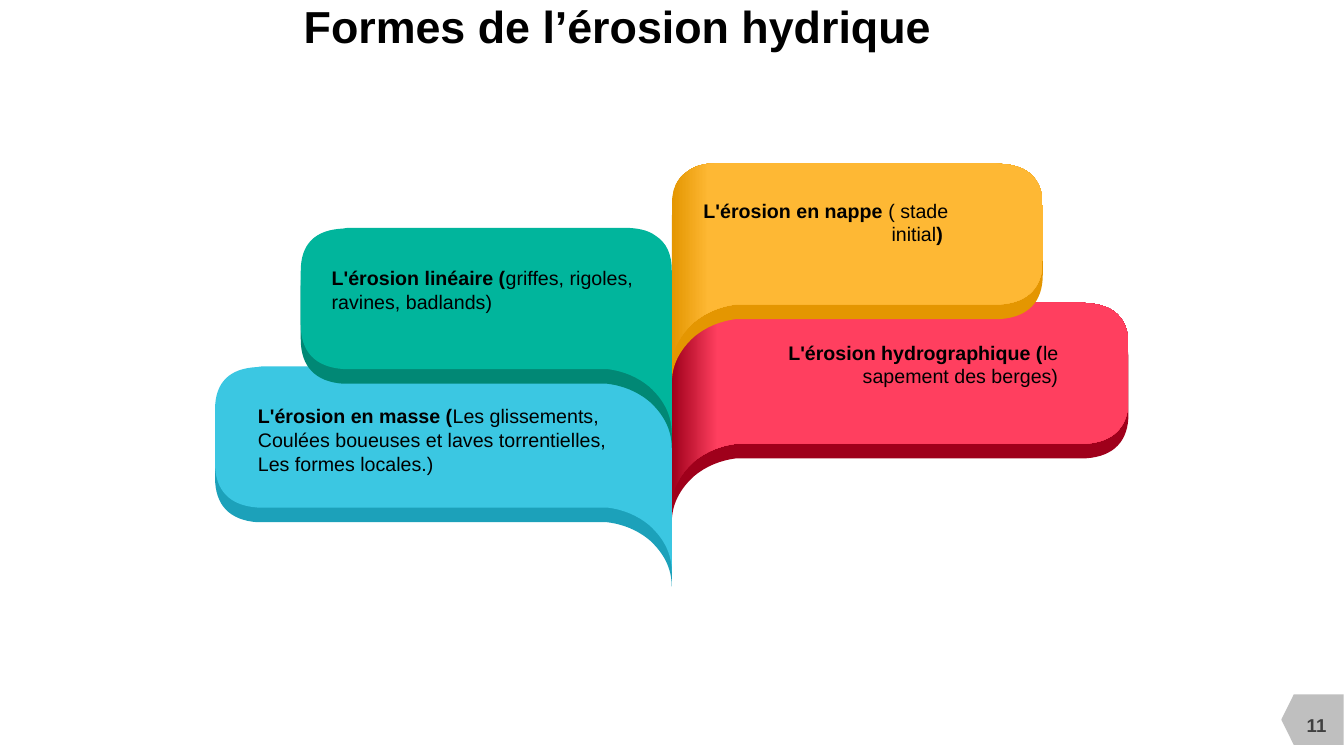
from dataclasses import dataclass

from lxml import etree
from pptx import Presentation
from pptx.dml.color import RGBColor
from pptx.enum.shapes import MSO_SHAPE
from pptx.enum.text import MSO_ANCHOR, PP_ALIGN
from pptx.oxml.ns import qn
from pptx.util import Cm, Pt

LEFT, CENTER, RIGHT = PP_ALIGN.LEFT, PP_ALIGN.CENTER, PP_ALIGN.RIGHT
TOP, MIDDLE = MSO_ANCHOR.TOP, MSO_ANCHOR.MIDDLE
PAGE_TAG = MSO_SHAPE.FLOWCHART_OFFPAGE_CONNECTOR


@dataclass(frozen=True)
class Theme:
    font: str = "Arial"
    title_size: float = 32
    body_size: float = 14
    number_size: float = 13.3
    text: str = "000000"
    number: str = "404040"
    tag: str = "BFBFBF"
    red: tuple = ("FF3F5F", "9F001B")
    orange: tuple = ("FEB834", "E49601")
    blue: tuple = ("3BC7E2", "1CA1BA")
    green: tuple = ("01B59C", "018875")


THEME = Theme()
SPINE = 16.93
LONG, SHORT = 11.51, 9.35
FOLD_DEPTH = 0.37

BANNERS = [
    (1, LONG, 7.62, THEME.red),
    (1, SHORT, 4.11, THEME.orange),
    (-1, LONG, 9.23, THEME.blue),
    (-1, SHORT, 5.74, THEME.green),
]

LABELS = [
    ((8.36, 6.71, 8.1, 1.19), LEFT,
     [("L'érosion linéaire (", True), ("griffes, rigoles, ravines, badlands)", False)]),
    ((6.5, 10.19, 9.17, 1.8), LEFT,
     [("L'érosion en masse (", True),
      ("Les glissements, Coulées boueuses et laves torrentielles, Les formes locales.)", False)]),
    ((17.35, 5.01, 6.55, 1.19), RIGHT,
     [(" L'érosion en nappe ", True), ("( stade initial", False), (") ", True)]),
    ((18.21, 8.59, 8.46, 1.19), RIGHT,
     [(" L'érosion hydrographique (", True), ("le sapement des berges)", False)]),
]


def banner_segments(width):
    inner, edge = width - 0.36, width - 1.07
    return [
        [(width - 1.35, 0)],
        [(width - 1.25, 0), (width - 1.15, 0), (edge, 0.02)],
        [(inner, 0.05), (width, 0.41), (width, 1.09)],
        [(width, 2.44)],
        [(width, 3.12), (inner, 3.51), (edge, 3.56)],
        [(width - 1.15, 3.56), (width - 1.25, 3.56), (width - 1.35, 3.56)],
        [(1.63, 3.56)],
        [(1.22, 3.61), (0.86, 3.76), (0.56, 4.01)],
        [(0.2, 4.34), (0, 4.72), (0, 5.18)],
        [(0, 1.09)],
        [(0, 0.66), (0.13, 0.38), (0.41, 0.2)],
        [(0.61, 0.05), (0.89, 0), (1.24, 0)],
    ]


def bend_segments(shape, segments):
    lines = iter(list(shape._element.iter(qn("a:lnTo"))))
    for segment in segments:
        parts = [next(lines) for _ in segment]
        if len(parts) == 3:
            curve = etree.Element(qn("a:cubicBezTo"))
            parts[0].addprevious(curve)
            for part in parts:
                curve.append(part[0])
                part.getparent().remove(part)


def paint(shape, color):
    shape.shadow.inherit = False
    shape.line.fill.background()
    shape.fill.solid()
    shape.fill.fore_color.rgb = RGBColor.from_string(color)


def add_banner_layer(group, side, width, top, color):
    segments = banner_segments(width)
    outline = [segments[-1][-1]] + [point for segment in segments for point in segment]
    points = [(Cm(SPINE + side * x), Cm(top + y)) for x, y in outline]
    builder = group.shapes.build_freeform(*points[0], scale=1.0)
    builder.add_line_segments(points[1:], close=True)
    shape = builder.convert_to_shape()
    bend_segments(shape, segments)
    paint(shape, color)
    return shape


def add_banner(slide, side, width, top, colors):
    front_color, fold_color = colors
    group = slide.shapes.add_group_shape()
    add_banner_layer(group, side, width, top + FOLD_DEPTH, fold_color)
    front = add_banner_layer(group, side, width, top, front_color)
    if side > 0:
        front.fill.gradient()
        front.fill.gradient_angle = 0
        stops = zip(front.fill.gradient_stops, (0, 0.1), (fold_color, front_color))
        for stop, position, color in stops:
            stop.position = position
            stop.color.rgb = RGBColor.from_string(color)


def add_text(slide, box, runs, size, color=THEME.text, align=LEFT, anchor=TOP, wrap=True):
    frame = slide.shapes.add_textbox(*map(Cm, box)).text_frame
    frame.word_wrap = wrap
    frame.vertical_anchor = anchor
    frame.margin_left = frame.margin_right = frame.margin_top = frame.margin_bottom = 0
    paragraph = frame.paragraphs[0]
    paragraph.alignment = align
    for text, bold in runs:
        run = paragraph.add_run()
        run.text = text
        run.font.name = THEME.font
        run.font.size = Pt(size)
        run.font.bold = bold
        run.font.color.rgb = RGBColor.from_string(color)


def add_page_number(slide, number):
    tag = slide.shapes.add_shape(PAGE_TAG, Cm(32.44), Cm(17.35), Cm(1.27), Cm(1.57))
    tag.rotation = 90
    paint(tag, THEME.tag)
    add_text(slide, (32.33, 17.75, 1.7, 1.02), [(number, True)],
             THEME.number_size, THEME.number, CENTER, MIDDLE)


def main():
    presentation = Presentation()
    presentation.slide_width, presentation.slide_height = Cm(33.87), Cm(19.05)
    slide = presentation.slides.add_slide(presentation.slide_layouts[6])
    add_page_number(slide, "11")
    add_text(slide, (5.21, -0.05, 21.03, 1.4), [("Formes de l’érosion hydrique ", True)],
             THEME.title_size, align=CENTER, anchor=MIDDLE, wrap=False)
    for banner in BANNERS:
        add_banner(slide, *banner)
    for box, align, runs in LABELS:
        add_text(slide, box, runs, THEME.body_size, align=align)
    presentation.save("out.pptx")


if __name__ == "__main__":
    main()
